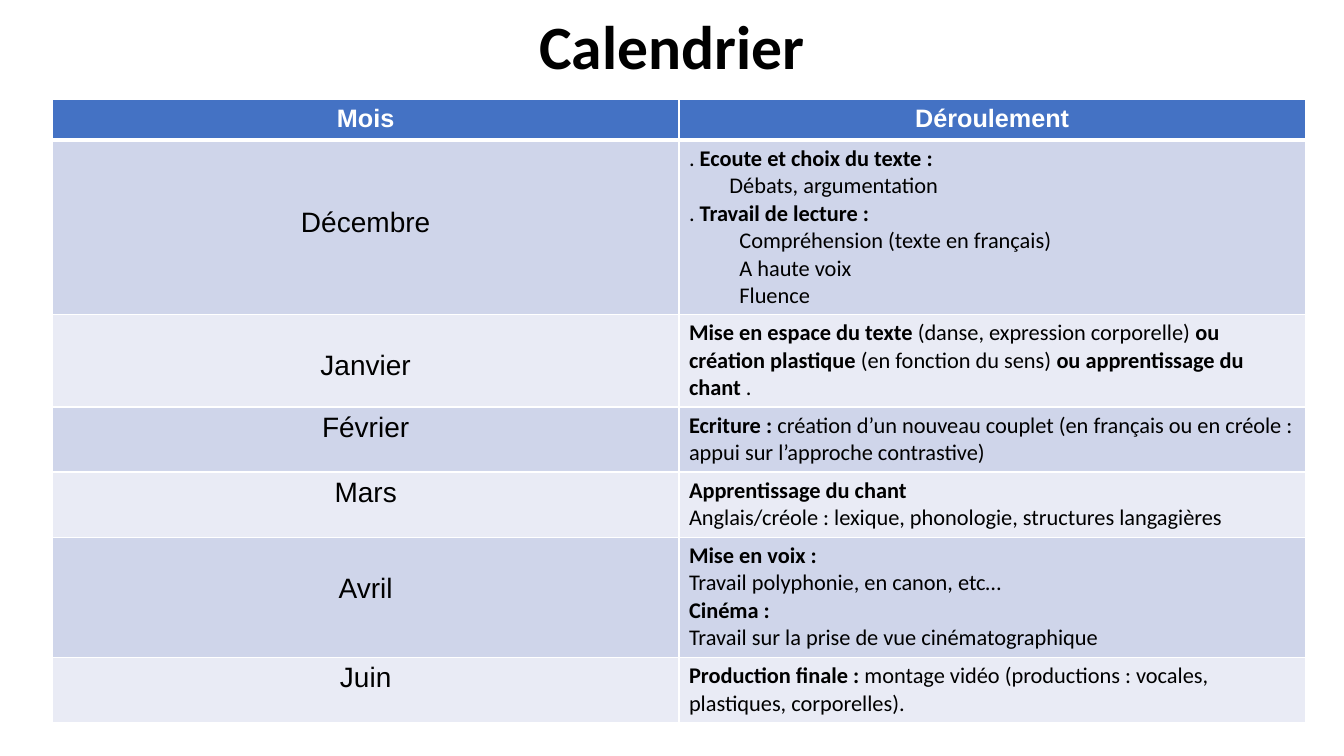
import pptx
import pptx.util
import pptx.dml.color
import pptx.enum.text
import pptx.oxml
import pptx.oxml.ns

Cm = pptx.util.Cm
Pt = pptx.util.Pt
ALIGN = pptx.enum.text.PP_ALIGN
COLORS = {"head": "4472C4", "dark": "CFD5EA", "light": "E9EBF5",
          "white": "FFFFFF", "black": "000000"}

# Month, row height in cm, lines dropped above the month,
# then (indent in cm, text) per paragraph; *stars* enclose bold words
MONTHS = [
    ("Décembre", 4.39, 2, [
        (0, ". *Ecoute et choix du texte :*"),
        (1.02, "Débats, argumentation"),
        (0, ". *Travail de lecture :*"),
        (1.27, "Compréhension (texte en français)"),
        (1.27, "A haute voix"),
        (1.27, "Fluence")]),
    ("Janvier", 2.33, 1, [
        (0, "*Mise en espace du texte *(danse, expression corporelle) "
            "*ou création plastique *(en fonction du sens) "
            "*ou apprentissage du chant *.")]),
    ("Février", 1.64, 0, [
        (0, "*Ecriture :* création d’un nouveau couplet (en français ou "
            "en créole : appui sur l’approche contrastive)")]),
    ("Mars", 1.64, 0, [
        (0, "*Apprentissage du chant*"),
        (0, "Anglais/créole : lexique, phonologie, structures langagières")]),
    ("Avril", 3.03, 1, [
        (0, "*Mise en voix :*"),
        (0, "Travail polyphonie, en canon, etc…"),
        (0, "*Cinéma :*"),
        (0, "Travail sur la prise de vue cinématographique")]),
    ("Juin", 1.64, 0, [
        (0, "*Production finale :* montage vidéo (productions : vocales, "
            "plastiques, corporelles).")]),
]


def style(run, font, size, color, bold=False):
    run.font.name = font
    run.font.size = Pt(size)
    run.font.bold = bold
    run.font.color.rgb = pptx.dml.color.RGBColor.from_string(COLORS[color])


def paint(cell, color, base=1):
    """Fill a cell and give it white borders, the bottom one base points wide."""
    props = cell._tc.get_or_add_tcPr()
    for side, width in (("L", 1), ("R", 1), ("T", 1), ("B", base)):
        props.append(pptx.oxml.parse_xml(
            f'<a:ln{side} {pptx.oxml.ns.nsdecls("a")} w="{Pt(width)}">'
            f'<a:solidFill><a:srgbClr val="{COLORS["white"]}"/></a:solidFill>'
            f'</a:ln{side}>'))
    cell.fill.solid()
    cell.fill.fore_color.rgb = pptx.dml.color.RGBColor.from_string(COLORS[color])


deck = pptx.Presentation()
deck.slide_width = Cm(33.87)
deck.slide_height = Cm(19.05)
slide = deck.slides.add_slide(deck.slide_layouts[5])

# Title
title = slide.shapes.title
title.left, title.top, title.width, title.height = Cm(2.33), Cm(0.28), Cm(29.21), Cm(1.96)
title.text_frame.text = "Calendrier"
title.text_frame.vertical_anchor = pptx.enum.text.MSO_ANCHOR.MIDDLE
para = title.text_frame.paragraphs[0]
para.alignment = ALIGN.CENTER
para.line_spacing = 0.9
style(para.runs[0], "Calibri", 44, "black", True)

# Table and its header
heights = [1.03] + [month[1] for month in MONTHS]
table = slide.shapes.add_table(len(heights), 2, Cm(1.32), Cm(2.5),
                               Cm(31.58), Cm(sum(heights))).table
for row, height in zip(table.rows, heights):
    row.height = Cm(height)
for col, label in enumerate(("Mois", "Déroulement")):
    cell = table.cell(0, col)
    cell.text_frame.text = label
    para = cell.text_frame.paragraphs[0]
    para.alignment = ALIGN.CENTER
    style(para.runs[0], "Arial", 18, "white", True)
    paint(cell, "head", 3)

# One row per month
for idx, (name, height, drop, lines) in enumerate(MONTHS, 1):
    band = "dark" if idx % 2 else "light"
    month, plan = table.cell(idx, 0), table.cell(idx, 1)
    month.text_frame.text = name
    month.margin_top = Cm(0.13 + 0.78 * drop)
    para = month.text_frame.paragraphs[0]
    para.alignment = ALIGN.CENTER
    style(para.runs[0], "Arial", 20, "black")

    plan.text_frame.text = "\n".join(text for indent, text in lines)
    for para, (indent, text) in zip(plan.text_frame.paragraphs, lines):
        para.text = ""
        if indent:
            para._p.get_or_add_pPr().set("marL", str(Cm(indent)))
        for part, words in enumerate(text.split("*")):
            if words:
                run = para.add_run()
                run.text = words
                style(run, "Calibri", 16, "black", part % 2 == 1)
    paint(month, band)
    paint(plan, band)

deck.save("out.pptx")
